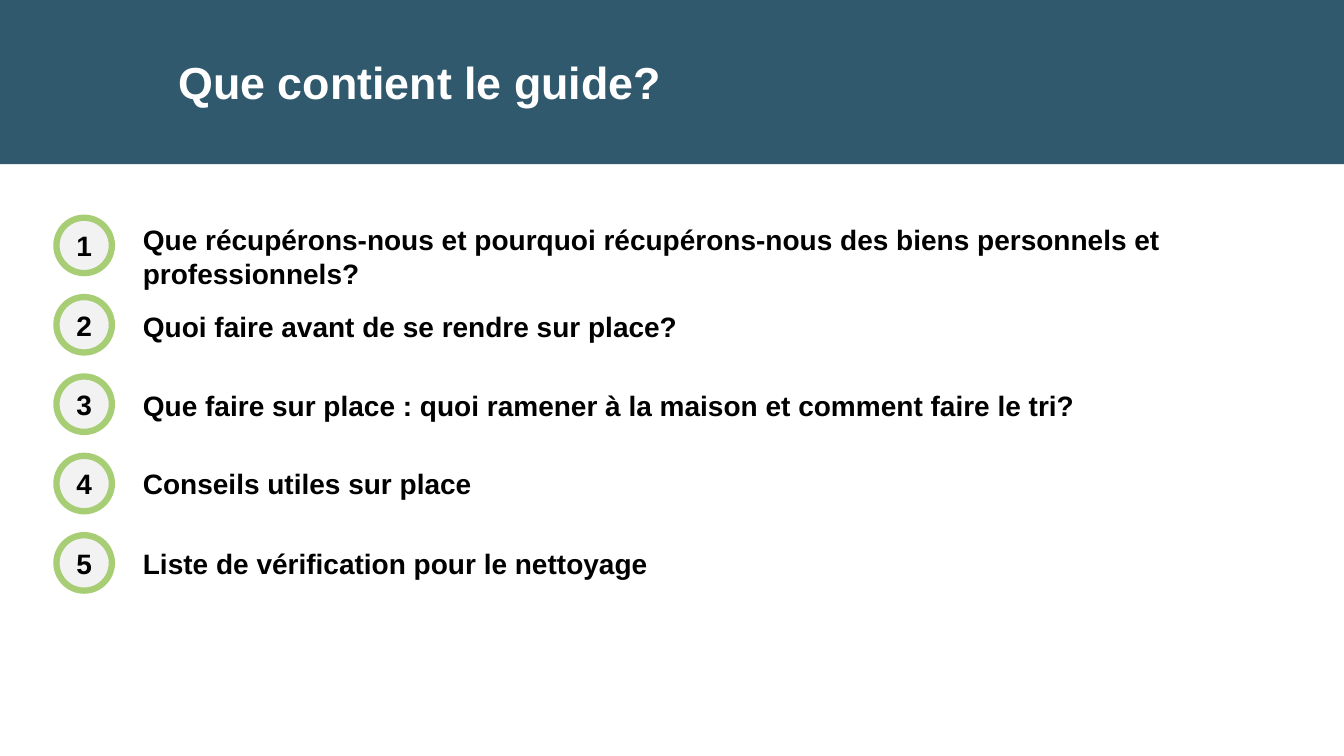
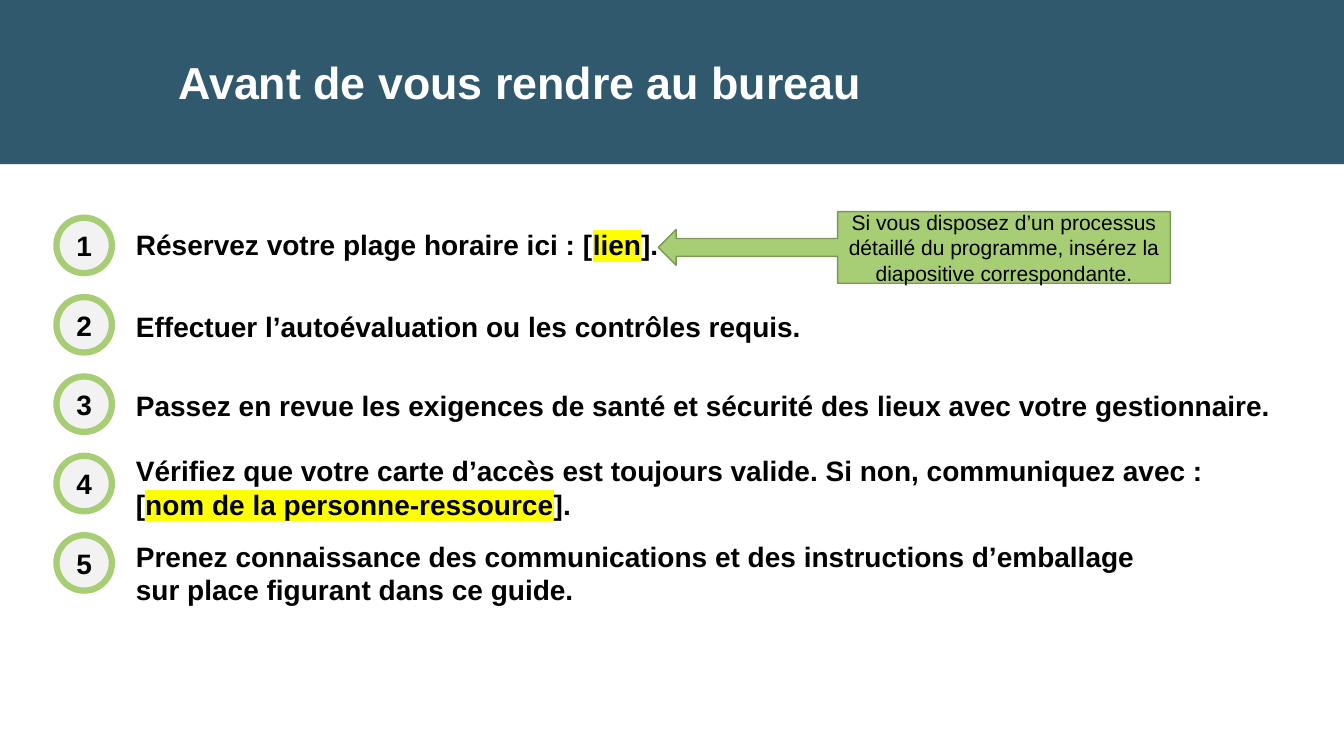
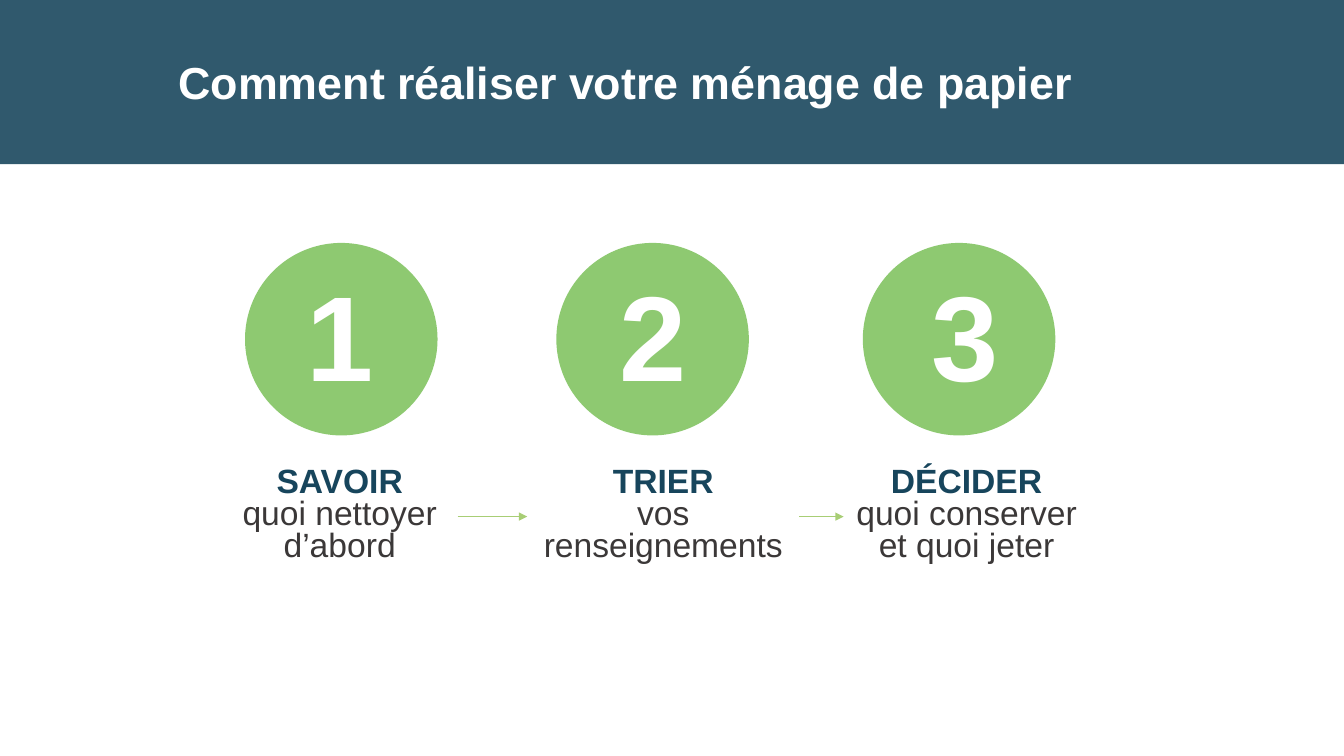
import pptx
import pptx.dml.color
import pptx.enum.shapes
import pptx.enum.text
import pptx.oxml
import pptx.oxml.ns
import pptx.util

Pt = pptx.util.Pt
Shape = pptx.enum.shapes.MSO_SHAPE
Anchor = pptx.enum.text.MSO_ANCHOR
Align = pptx.enum.text.PP_ALIGN
AutoSize = pptx.enum.text.MSO_AUTO_SIZE
NAMESPACE = pptx.oxml.ns.nsdecls("a")

FONT = "Arial"
NAVY, GREEN, STEP_GREEN, OLIVE = "17455C", "A8CE75", "6BB945", "7C9857"
WHITE, BLACK, PALE, GREY, YELLOW = "FFFFFF", "000000", "F2F2F2", "3B3838", "FFFF00"
SLIDE_WIDTH, SLIDE_HEIGHT = 960, 540


def paint(fill, color, opacity=None):
    """Make a shape, line or font fill solid, with an optional opacity in percent."""
    fill.solid()
    fill.fore_color.rgb = pptx.dml.color.RGBColor.from_string(color)
    if opacity is not None:
        alpha = pptx.oxml.parse_xml(f'<a:alpha {NAMESPACE} val="{opacity * 1000}"/>')
        fill._xPr.find(".//" + pptx.oxml.ns.qn("a:srgbClr")).append(alpha)


def write(shape, text, size, color=BLACK, bold=True, align=Align.LEFT):
    """Fill a shape with text: newlines part paragraphs, bars enclose highlights."""
    frame = shape.text_frame
    frame.text = "\n".join("" for line in text.split("\n"))
    for paragraph, line in zip(frame.paragraphs, text.split("\n")):
        paragraph.alignment = align
        for index, piece in enumerate(line.split("|")):
            run = paragraph.add_run()
            run.text = piece
            run.font.name = FONT
            run.font.size = Pt(size)
            run.font.bold = bold
            paint(run.font.fill, color)
            if index % 2:
                highlight = pptx.oxml.parse_xml(
                    f'<a:highlight {NAMESPACE}><a:srgbClr val="{YELLOW}"/></a:highlight>')
                run._r.rPr.find(pptx.oxml.ns.qn("a:latin")).addprevious(highlight)
    return frame


presentation = pptx.Presentation()
presentation.slide_width = Pt(SLIDE_WIDTH)
presentation.slide_height = Pt(SLIDE_HEIGHT)
layout = presentation.slide_layouts.get_by_name("Title Only")
layout_title = layout.placeholders[0]
layout_title.left, layout_title.top = Pt(120.24), Pt(15.84)
layout_title.width, layout_title.height = Pt(700.56), Pt(65.52)

# Title and band of every slide
titles = [
    "Que contient le guide?",
    "Avant de vous rendre au bureau",
    "Comment réaliser votre ménage de papier",
]
for title in titles:
    slide = presentation.slides.add_slide(layout)
    band = slide.shapes.add_shape(Shape.RECTANGLE, 0, Pt(-0.72), Pt(SLIDE_WIDTH), Pt(118))
    band.shadow.inherit = False
    paint(band.fill, NAVY, 89)
    band.line.fill.background()
    slide.shapes._spTree.insert(2, band._element)
    frame = write(slide.shapes.title, title, 32, WHITE)
    frame.auto_size = AutoSize.NONE
    frame.vertical_anchor = Anchor.BOTTOM
    frame.paragraphs[0].line_spacing = 0.9

guide_slide, office_slide, paper_slide = presentation.slides

# Numbered lists: top, width, wrapping and text of each item
guide_items = [
    (155.5, 833, True, "Que récupérons-nous et pourquoi récupérons-nous des biens "
                       "personnels et professionnels?"),
    (217.4, 398.9, False, "Quoi faire avant de se rendre sur place?"),
    (273.6, 689.8, False, "Que faire sur place : quoi ramener à la maison et comment faire le tri?"),
    (329.8, 259.2, False, "Conseils utiles sur place"),
    (386.6, 378, False, "Liste de vérification pour le nettoyage"),
]
office_items = [
    (159.1, 389.5, False, "Réservez votre plage horaire ici : [|lien|]."),
    (217.4, 495.4, False, "Effectuer l’autoévaluation ou les contrôles requis."),
    (273.6, 839.5, True, "Passez en revue les exigences de santé et sécurité des lieux "
                         "avec votre gestionnaire."),
    (320.4, 781.9, True, "Vérifiez que votre carte d’accès est toujours valide. Si non, "
                         "communiquez avec : [|nom de la personne-ressource|]."),
    (381.6, 738.7, True, "Prenez connaissance des communications et des instructions "
                         "d’emballage sur place figurant dans ce guide."),
]
BADGE_LEFT, BADGE_TOP, BADGE_SIZE, BADGE_PITCH = 40.3, 155.5, 39.6, 56.7
for slide, text_left, items in ((guide_slide, 95, guide_items), (office_slide, 90, office_items)):
    for index, (top, width, wrap, text) in enumerate(items):
        badge = slide.shapes.add_shape(
            Shape.OVAL, Pt(BADGE_LEFT), Pt(BADGE_TOP + index * BADGE_PITCH),
            Pt(BADGE_SIZE), Pt(BADGE_SIZE))
        badge.shadow.inherit = False
        paint(badge.fill, PALE)
        paint(badge.line.fill, GREEN)
        badge.line.width = Pt(4.5)
        frame = write(badge, str(index + 1), 20, align=Align.CENTER)
        frame.vertical_anchor = Anchor.MIDDLE
        frame.margin_left = frame.margin_right = 0

        item = slide.shapes.add_textbox(Pt(text_left), Pt(top), Pt(width), Pt(31.5))
        frame = write(item, text, 20)
        frame.word_wrap = wrap
        frame.auto_size = AutoSize.SHAPE_TO_FIT_TEXT

# Note pointing at the booking link
callout = office_slide.shapes.add_shape(
    Shape.LEFT_ARROW_CALLOUT, Pt(470.2), Pt(151.2), Pt(365.8), Pt(51.1))
callout.shadow.inherit = False
paint(callout.fill, GREEN)
paint(callout.line.fill, OLIVE)
callout.line.width = Pt(1)
frame = write(callout, "Si vous disposez d’un processus détaillé du programme, insérez la "
              "diapositive correspondante.", 15, bold=False, align=Align.CENTER)
frame.vertical_anchor = Anchor.MIDDLE

# Three steps: circle left, digit left, label left, label width, label text
steps = [
    (175, 211.7, 158.4, 168.5, "SAVOIR\nquoi nettoyer d’abord"),
    (397.4, 435.6, 376.6, 194.4, "TRIER\nvos renseignements"),
    (616.3, 658.1, 602.6, 175.7, "DÉCIDER\nquoi conserver et quoi jeter"),
]
CIRCLE_SIZE = 137.5
labels = []
for number, (circle_left, digit_left, label_left, label_width, text) in enumerate(steps, 1):
    circle = paper_slide.shapes.add_shape(
        Shape.OVAL, Pt(circle_left), Pt(173.5), Pt(CIRCLE_SIZE), Pt(CIRCLE_SIZE))
    circle.shadow.inherit = False
    paint(circle.fill, STEP_GREEN, 76)
    circle.line.fill.background()

    digit = paper_slide.shapes.add_textbox(Pt(digit_left), Pt(182.9), Pt(64), Pt(111.6))
    write(digit, str(number), 86.2, WHITE).word_wrap = True

    label = paper_slide.shapes.add_textbox(Pt(label_left), Pt(330.5), Pt(label_width), Pt(77))
    frame = write(label, text, 24, NAVY, align=Align.CENTER)
    frame.word_wrap = True
    frame.auto_size = AutoSize.SHAPE_TO_FIT_TEXT
    for paragraph in frame.paragraphs:
        paragraph.line_spacing = 0.8
    description = frame.paragraphs[1].runs[0]
    description.font.bold = False
    paint(description.font.fill, GREY)
    labels.append(label)

for before, after in zip(labels, labels[1:]):
    arrow = paper_slide.shapes.add_connector(
        pptx.enum.shapes.MSO_CONNECTOR.STRAIGHT, 0, 0, 0, 0)
    arrow.begin_connect(before, 3)
    arrow.end_connect(after, 1)
    paint(arrow.line.fill, GREEN)
    arrow.line.width = Pt(0.5)
    arrow.line._get_or_add_ln().append(
        pptx.oxml.parse_xml(f'<a:tailEnd {NAMESPACE} type="triangle"/>'))
    arrow._element.spPr.append(pptx.oxml.parse_xml(f"<a:effectLst {NAMESPACE}/>"))

presentation.save("out.pptx")
